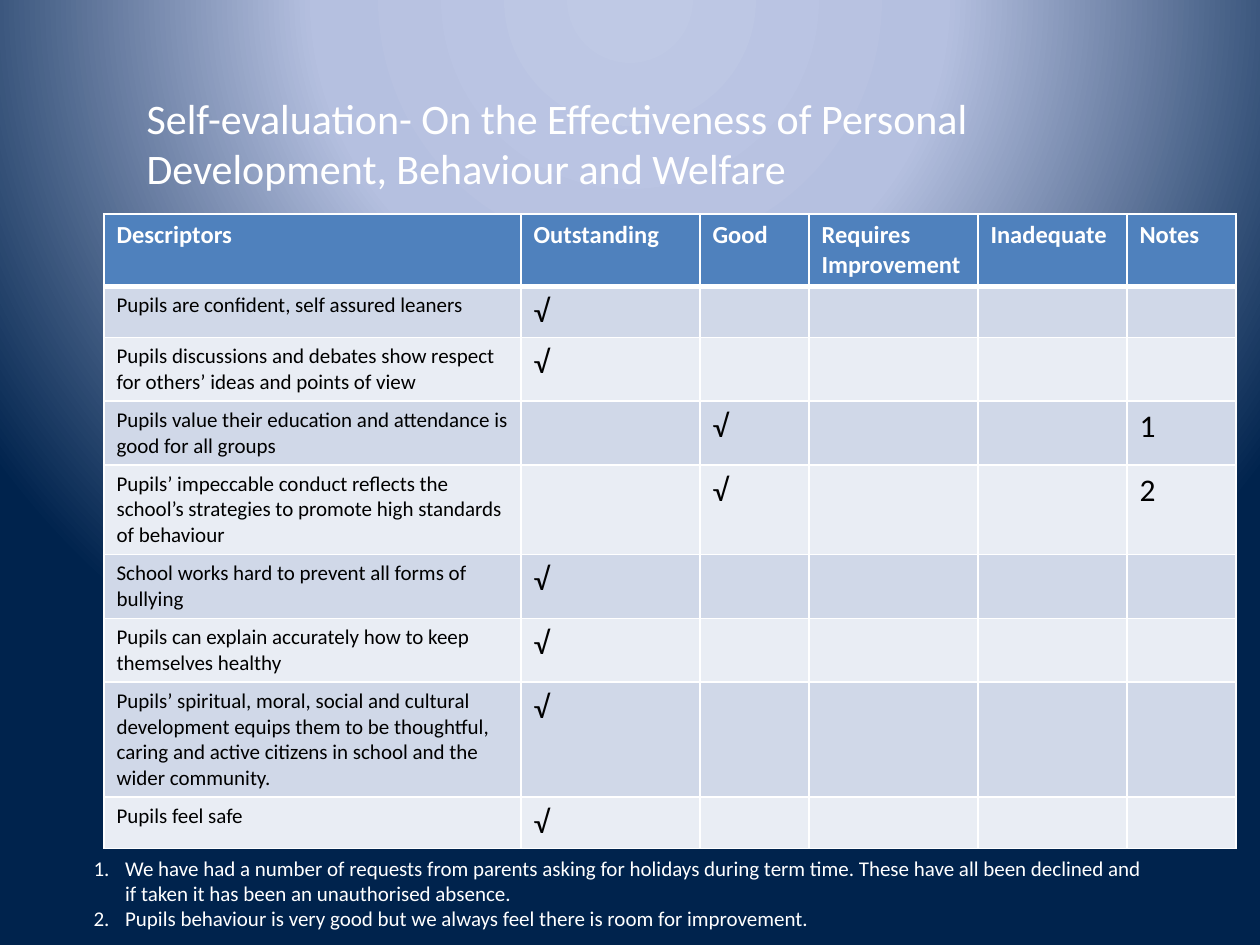
from lxml.etree import SubElement
from pptx import Presentation
from pptx.dml.color import RGBColor
from pptx.enum.text import MSO_ANCHOR, MSO_AUTO_SIZE, PP_ALIGN
from pptx.oxml import parse_xml
from pptx.oxml.ns import nsdecls, qn
from pptx.util import Emu, Pt

SCALE = 914400 / 126
TICK = "√"
WHITE, BLACK = "FFFFFF", "000000"
HEAD_FILL = "4F81BD"
BANDS = ["D0D8E8", "E9EDF4"]
STOPS = [(0, "BFC9E5"), (40, "B5C0E0"), (100, "00234D")]

TITLE = "Self-evaluation- On the Effectiveness of Personal Development, Behaviour and Welfare"
HEADS = ["Descriptors", "Outstanding", "Good", "Requires\nImprovement", "Inadequate", "Notes"]
GRADES = [
    (51, "Pupils are confident, self assured leaners", 1, ""),
    (63, "Pupils discussions and debates show respect for others’ ideas and points of view", 1, ""),
    (63, "Pupils value their education and attendance is good for all groups", 2, "1"),
    (88, "Pupils’ impeccable conduct reflects the school’s strategies to promote "
         "high standards of behaviour", 2, "2"),
    (63, "School works hard to prevent all forms of bullying", 1, ""),
    (63, "Pupils can explain accurately how to keep themselves healthy", 1, ""),
    (114, "Pupils’ spiritual, moral, social and cultural development equips them to be "
          "thoughtful, caring and active citizens in school and the wider community.", 1, ""),
    (51, "Pupils feel safe", 1, ""),
]
NOTES = [
    "We have had a number of requests from parents asking for holidays during term time. "
    "These have all been declined and if taken it has been an unauthorised absence.",
    "Pupils behaviour is very good but we always feel there is room for improvement.",
]
WIDTHS = [417, 179, 109, 169, 149, 109]
HEAD_HIGH = 71


def px(num):
    return Emu(round(num * SCALE))


def color(code):
    return RGBColor.from_string(code)


def put(item, vals):
    for key, val in vals.items():
        setattr(item, key, val)


def style(para, size, code, bold=False):
    put(para, {"alignment": PP_ALIGN.LEFT, "space_before": Pt(0)})
    put(para.font, {"name": "Calibri", "size": Pt(size), "bold": bold})
    para.font.color.rgb = color(code)


def paint(slide):
    stops = "".join(
        f'<a:gs pos="{pos * 1000}"><a:srgbClr val="{code}"/></a:gs>' for pos, code in STOPS
    )
    back = parse_xml(
        f'<p:bg {nsdecls("p", "a")}><p:bgPr><a:gradFill rotWithShape="1">'
        f'<a:gsLst>{stops}</a:gsLst><a:path path="circle">'
        '<a:fillToRect l="50000" t="-80000" r="50000" b="180000"/></a:path>'
        "</a:gradFill><a:effectLst/></p:bgPr></p:bg>"
    )
    slide.element.cSld.insert(0, back)


def place(shape, left, top, width, height):
    put(shape, {"left": px(left), "top": px(top), "width": px(width), "height": px(height)})
    put(shape.text_frame, {
        "word_wrap": True,
        "auto_size": MSO_AUTO_SIZE.NONE,
        "vertical_anchor": MSO_ANCHOR.TOP,
    })
    return shape.text_frame


def add_title(slide):
    frame = place(slide.shapes.title, 134, 86, 1012, 115)
    frame.text = TITLE
    style(frame.paragraphs[0], 24, WHITE)


def add_notes(slide):
    frame = place(slide.placeholders[1], 81, 849, 1081, 90)
    frame.text = "\n".join(NOTES)
    for para in frame.paragraphs:
        props = para._p.get_or_add_pPr()
        props.set("marL", str(Emu(228600)))
        props.set("indent", str(Emu(-228600)))
        SubElement(props, qn("a:buFont"), typeface="+mj-lt")
        SubElement(props, qn("a:buAutoNum"), type="arabicPeriod")
        style(para, 12, WHITE)


def edge(cell, sides):
    props = cell._tc.get_or_add_tcPr()
    for side, width in sides.items():
        line = SubElement(props, qn(f"a:ln{side}"), w=str(Pt(width)))
        fill = SubElement(line, qn("a:solidFill"))
        SubElement(fill, qn("a:srgbClr"), val=WHITE)


def fill_cell(cell, text, row, size, code):
    edge(cell, {"L": 1, "R": 1, "T": 3 if row == 1 else 1, "B": 1 if row else 3})
    cell.fill.solid()
    cell.fill.fore_color.rgb = color(BANDS[(row - 1) % 2] if row else HEAD_FILL)
    cell.text = text
    for para in cell.text_frame.paragraphs:
        style(para, size, code, row == 0)


def add_grid(slide):
    highs = [HEAD_HIGH] + [grade[0] for grade in GRADES]
    table = slide.shapes.add_table(
        len(highs), len(WIDTHS), px(104), px(214), px(sum(WIDTHS)), px(sum(highs))
    ).table
    for col, width in zip(table.columns, WIDTHS):
        col.width = px(width)
    for row, high in zip(table.rows, highs):
        row.height = px(high)
    for col, text in enumerate(HEADS):
        fill_cell(table.cell(0, col), text, 0, 14, WHITE)
    last = len(WIDTHS) - 1
    for row, (_, text, mark, note) in enumerate(GRADES, 1):
        shown = {0: text, mark: TICK, last: note}
        for col in range(len(WIDTHS)):
            size = 18 if col else 12
            fill_cell(table.cell(row, col), shown.get(col, ""), row, size, BLACK)


def main():
    deck = Presentation()
    put(deck, {"slide_width": px(1260), "slide_height": px(945)})
    slide = deck.slides.add_slide(deck.slide_layouts[1])
    paint(slide)
    add_grid(slide)
    add_title(slide)
    add_notes(slide)
    deck.save("out.pptx")


if __name__ == "__main__":
    main()
